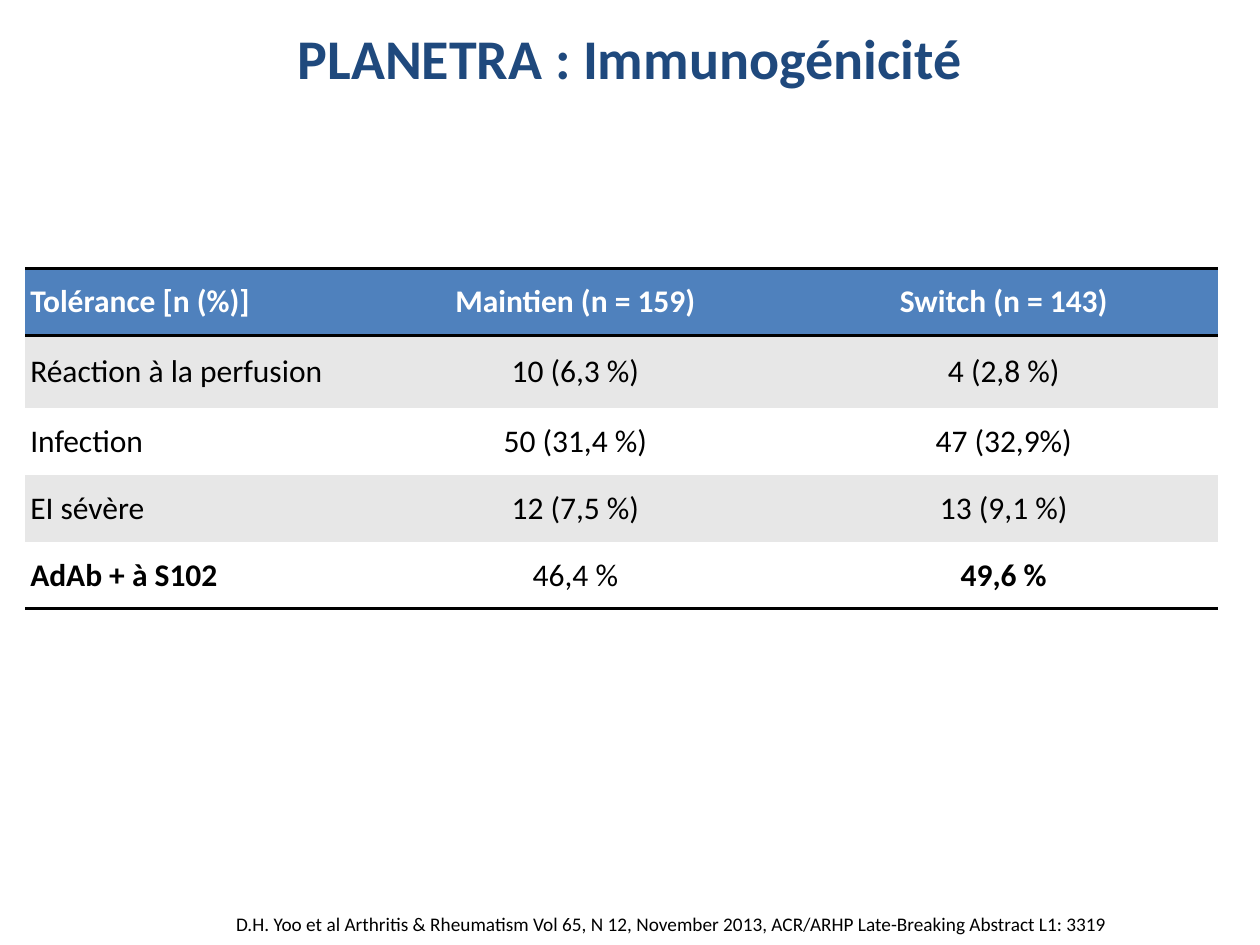
"""Build the PLANETRA immunogenicity slide."""
from lxml import etree
from pptx import Presentation, dml, util as u
from pptx.dml import color
from pptx.enum import text
from pptx.oxml import ns

TITLE = "PLANETRA : Immunogénicité"
SOURCE = ("D.H. Yoo et al Arthritis & Rheumatism Vol 65, N 12, November 2013, "
          "ACR/ARHP Late-Breaking Abstract L1: 3319")
ROWS = [
    ("Tolérance [n (%)]", "Maintien (n = 159)", "Switch (n = 143)"),
    ("Réaction à la perfusion", "10 (6,3 %)", "4 (2,8 %)"),
    ("Infection", "50 (31,4 %)", "47 (32,9%)"),
    ("EI sévère", "12 (7,5 %)", "13 (9,1 %)"),
    ("AdAb + à S102", "46,4 %", "49,6 %"),
]
WIDTHS = (192, 244.8, 244.8)
HEIGHTS = (38.2, 41.8, 38.2, 38.2, 38.2)
LAST = len(ROWS) - 1
BOLD = {(0, 0), (0, 1), (0, 2), (LAST, 0), (LAST, 2)}
RULES = {0: ("lnT", "lnB"), LAST: ("lnB",)}

NAVY = color.RGBColor(0x1F, 0x49, 0x7D)
BLUE = color.RGBColor(0x4F, 0x81, 0xBD)
GREY = color.RGBColor(0xE7, 0xE7, 0xE7)
WHITE = color.RGBColor(255, 255, 255)
BLACK = color.RGBColor(0, 0, 0)
PLAIN = "{2D5ABB26-0587-4C30-8999-92F81FD0307C}"
LEFT, MID = text.PP_ALIGN.LEFT, text.PP_ALIGN.CENTER


def place(shape, x, y, w, h):
    shape.left, shape.top = u.Pt(x), u.Pt(y)
    shape.width, shape.height = u.Pt(w), u.Pt(h)


def write(frame, words, size, ink, bold=False, align=MID):
    frame.text = words
    para = frame.paragraphs[0]
    para.alignment = align
    font = para.font
    font.name, font.size, font.bold = "Calibri", u.Pt(size), bold
    font.color.rgb = ink


def rule(cell, sides):
    props = cell._tc.get_or_add_tcPr()
    for spot, side in enumerate(sides):
        line = etree.Element(ns.qn("a:" + side), w=str(u.Pt(2)))
        fill = etree.SubElement(line, ns.qn("a:solidFill"))
        etree.SubElement(fill, ns.qn("a:srgbClr"), val=str(BLACK))
        props.insert(spot, line)


def add_grid(slide):
    frame = slide.shapes.add_table(
        len(ROWS), len(WIDTHS), u.Pt(14.4), u.Pt(153.4),
        u.Pt(sum(WIDTHS)), u.Pt(sum(HEIGHTS)))
    grid = frame.table
    grid._tbl.tblPr.find(ns.qn("a:tableStyleId")).text = PLAIN
    for col, width in zip(grid.columns, WIDTHS):
        col.width = u.Pt(width)
    for r, (row, height) in enumerate(zip(ROWS, HEIGHTS)):
        grid.rows[r].height = u.Pt(height)
        back = BLUE if r == 0 else GREY if r % 2 else WHITE
        for c, words in enumerate(row):
            cell = grid.cell(r, c)
            cell.margin_left = cell.margin_right = u.Pt(2.9)
            cell.margin_top = cell.margin_bottom = u.Pt(2.9)
            cell.vertical_anchor = text.MSO_ANCHOR.MIDDLE
            cell.fill.solid()
            cell.fill.fore_color.rgb = back
            write(cell.text_frame, words, 18, BLACK if r else WHITE,
                  (r, c) in BOLD, MID if c else LEFT)
            rule(cell, RULES.get(r, ()))


def main():
    deck = Presentation()
    deck.slide_width, deck.slide_height = u.Pt(720), u.Pt(540)
    slide = deck.slides.add_slide(deck.slide_layouts[5])
    title = slide.shapes.title
    place(title, 0, 6.5, 720, 52.6)
    title.text_frame.vertical_anchor = text.MSO_ANCHOR.MIDDLE
    write(title.text_frame, TITLE, 32, NAVY, True)
    add_grid(slide)
    note = slide.shapes.add_textbox(0, 0, 0, 0)
    place(note, 70.6, 517.7, 626.4, 20.9)
    note.text_frame.word_wrap = True
    write(note.text_frame, SOURCE, 11, BLACK)
    deck.save("out.pptx")


if __name__ == "__main__":
    main()
